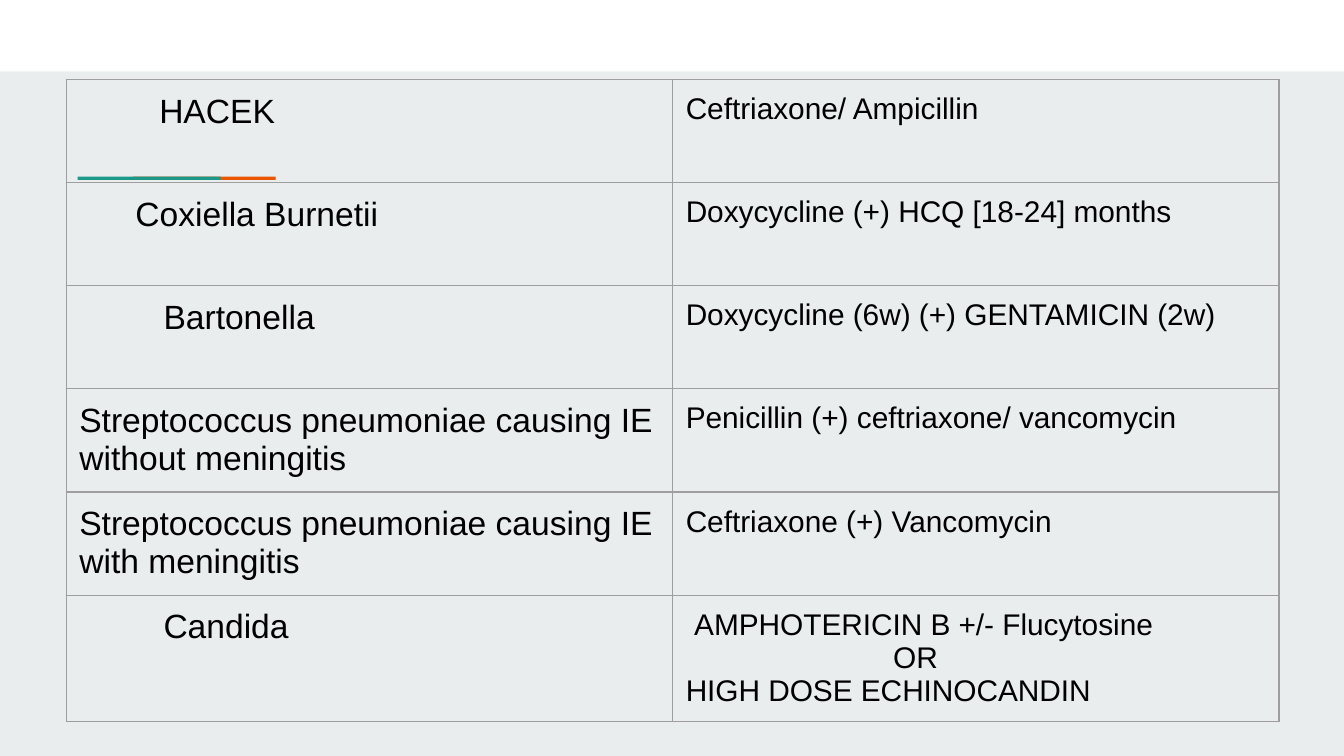
from dataclasses import dataclass

from lxml.etree import SubElement
from pptx import Presentation
from pptx.dml.color import RGBColor
from pptx.enum.shapes import MSO_SHAPE
from pptx.oxml.ns import qn
from pptx.util import Cm, Pt

TABLE_LEFT, TABLE_TOP = 1.25, 1.5
COLUMN_WIDTH, ROW_HEIGHT = 11.46, 1.95
CELL_MARGIN = 0.25
ORGANISM_SIZE, TREATMENT_SIZE = 18, 16


@dataclass(frozen=True)
class Bar:
    left: float
    top: float
    width: float
    height: float
    color: str


@dataclass(frozen=True)
class Line:
    text: str
    indent: float = 0


@dataclass(frozen=True)
class Therapy:
    organism: Line
    treatment: tuple[Line, ...]


BARS = [
    Bar(0, 0, 25.4, 1.35, "FFFFFF"),
    Bar(2.51, 3.34, 2.7, 0.06, "EB5600"),
    Bar(1.47, 3.34, 2.7, 0.06, "1A9988"),
]

THERAPIES = [
    Therapy(Line("HACEK", 1.51), (Line("Ceftriaxone/ Ampicillin"),)),
    Therapy(Line("Coxiella Burnetii", 1.06), (Line("Doxycycline (+) HCQ [18-24] months"),)),
    Therapy(Line("Bartonella", 1.59), (Line("Doxycycline (6w) (+) GENTAMICIN (2w)"),)),
    Therapy(
        Line("Streptococcus pneumoniae causing IE without meningitis"),
        (Line("Penicillin (+) ceftriaxone/ vancomycin"),),
    ),
    Therapy(
        Line("Streptococcus pneumoniae causing IE with meningitis"),
        (Line("Ceftriaxone (+) Vancomycin"),),
    ),
    Therapy(
        Line("Candida", 1.59),
        (
            Line("AMPHOTERICIN B +/- Flucytosine", 0.16),
            Line("OR", 3.92),
            Line("HIGH DOSE ECHINOCANDIN"),
        ),
    ),
]


def set_fill(fill, color: str) -> None:
    fill.solid()
    fill.fore_color.rgb = RGBColor.from_string(color)


def draw_bar(page, bar: Bar) -> None:
    box = page.shapes.add_shape(
        MSO_SHAPE.RECTANGLE, Cm(bar.left), Cm(bar.top), Cm(bar.width), Cm(bar.height)
    )
    box.shadow.inherit = False
    set_fill(box.fill, bar.color)
    box.line.fill.background()


def write_text(para, text: str, *, size: float, indent: float = 0,
               color: str = "000000", font: str = "Arial") -> None:
    properties = para._p.get_or_add_pPr()
    properties.set("marL", str(Cm(indent)))
    properties.set("indent", "0")
    span = para.add_run()
    span.text = text
    span.font.size = Pt(size)
    span.font.name = font
    set_fill(span.font.fill, color)


def set_borders(cell, color: str, width: float) -> None:
    properties = cell._tc.get_or_add_tcPr()
    for position, side in enumerate(("lnL", "lnR", "lnT", "lnB")):
        border = SubElement(properties, qn(f"a:{side}"), w=str(Pt(width)))
        fill = SubElement(border, qn("a:solidFill"))
        SubElement(fill, qn("a:srgbClr"), val=color)
        properties.remove(border)
        properties.insert(position, border)


def fill_cell(cell, lines: tuple[Line, ...], size: float) -> None:
    cell.margin_left = cell.margin_right = Cm(CELL_MARGIN)
    cell.margin_top = cell.margin_bottom = Cm(CELL_MARGIN)
    cell.fill.background()
    set_borders(cell, "9E9E9E", 0.75)
    for number, line in enumerate(lines):
        frame = cell.text_frame
        para = frame.add_paragraph() if number else frame.paragraphs[0]
        write_text(para, line.text, size=size, indent=line.indent)


def draw_table(page, therapies: list[Therapy]) -> None:
    table = page.shapes.add_table(
        len(therapies), 2, Cm(TABLE_LEFT), Cm(TABLE_TOP),
        Cm(2 * COLUMN_WIDTH), Cm(len(therapies) * ROW_HEIGHT),
    ).table
    table.first_row = table.horz_banding = False
    for row, therapy in enumerate(therapies):
        fill_cell(table.cell(row, 0), (therapy.organism,), ORGANISM_SIZE)
        fill_cell(table.cell(row, 1), therapy.treatment, TREATMENT_SIZE)


def main() -> None:
    deck = Presentation()
    deck.slide_width, deck.slide_height = Cm(25.4), Cm(14.29)
    page = deck.slides.add_slide(deck.slide_layouts[6])
    set_fill(page.background.fill, "E9EDEE")
    for bar in BARS:
        draw_bar(page, bar)
    draw_table(page, THERAPIES)
    deck.save("out.pptx")


if __name__ == "__main__":
    main()
